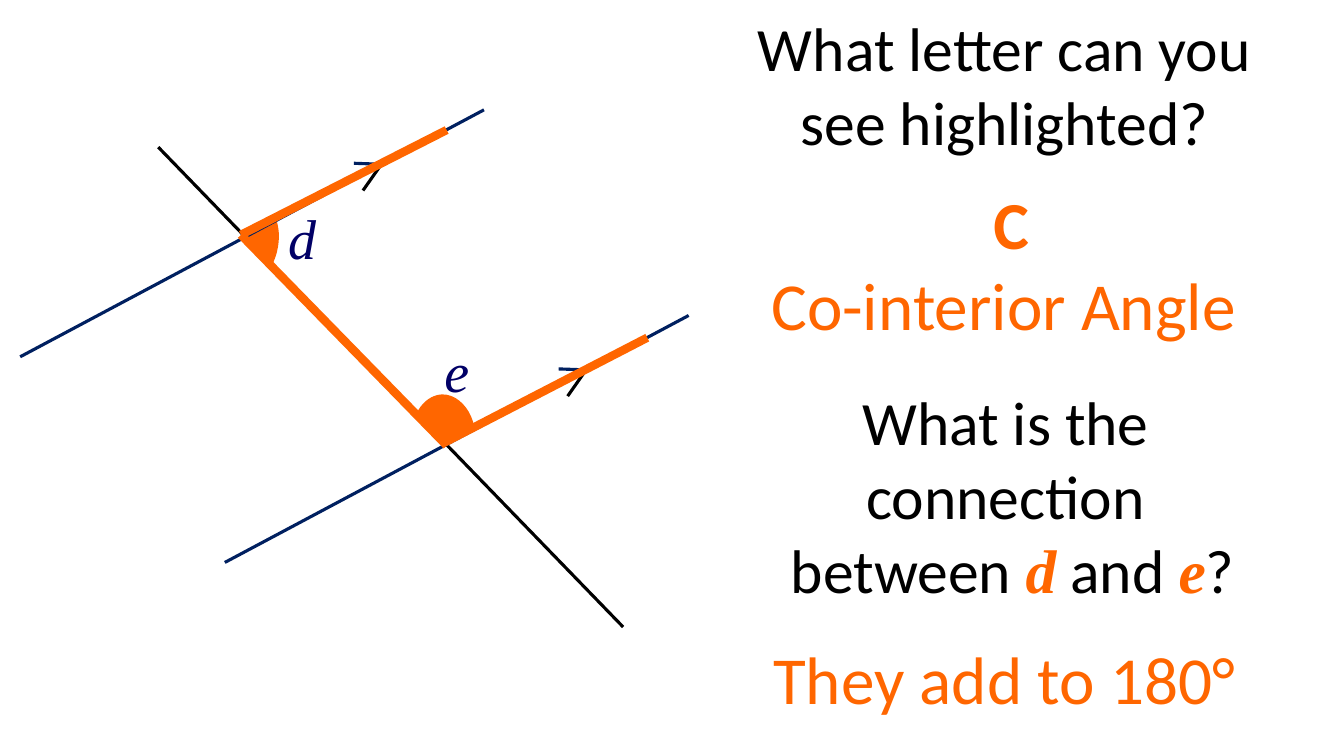
"""Build a slide on co-interior angles between parallel lines."""
import pptx
import pptx.dml.color
import pptx.enum.shapes
import pptx.enum.text
import pptx.oxml
import pptx.util
from pptx.util import Inches

BLACK, NAVY, INDIGO, ORANGE = "000000", "002060", "010066", "FF6600"
SERIF = "Times New Roman"
VARIABLE = {"font": SERIF, "color": ORANGE, "bold": True, "italic": True}

QUESTION = ("What letter can you see highlighted?", (7.29, 0.05, 5.35, 1.58))
PROMPTS = [
    ([["What is the connection"],
      [" between ", ("d", VARIABLE), " and ", ("e", VARIABLE), "?"]],
     (7.3, 3.76, 5.35, 2.32), {"size": 44}),
    ([[("C", {"bold": True})], ["Co-interior Angle "]],
     (7.45, 1.76, 5.16, 1.72), {"size": 48, "color": ORANGE}),
    ([["They add to 180°"]],
     (7.17, 6.27, 5.58, 0.91), {"size": 48, "color": ORANGE}),
]
ANGLE_LABELS = [("d", (2.76, 1.97, 0.41, 0.77)), ("e", (4.31, 3.29, 0.39, 0.77))]

# Each wedge: vertex, arc start, then cubic curves of two controls and an end.
WEDGES = [
    ((4.39, 4.39), (4.7, 4.24), [((4.66, 4.05), (4.53, 3.92), (4.39, 3.92)),
                                 ((4.3, 3.92), (4.2, 3.98), (4.14, 4.1))]),
    ((2.43, 2.34), (2.7, 2.61), [((2.74, 2.53), (2.76, 2.43), (2.76, 2.34)),
                                 ((2.76, 2.29), (2.75, 2.24), (2.74, 2.2))]),
]
TRANSVERSAL = ((1.57, 1.46), (6.18, 6.22))
PARALLEL = [((0.2, 3.54), (4.8, 1.09), NAVY),
            ((3.51, 1.62), (3.79, 1.63), NAVY),
            ((3.79, 1.62), (3.6, 1.89), BLACK)]
PARALLEL_SHIFTS = [(0, 0), (2.03, 2.04)]
HIGHLIGHTS = [((2.39, 2.33), (4.43, 1.29)),
              ((4.39, 4.4), (6.42, 3.35)),
              ((2.39, 2.33), (4.43, 4.42))]
CURVE_STEPS = 10


def rgb(value):
    return pptx.dml.color.RGBColor.from_string(value)


def write(holder, paragraphs, box, **style):
    holder.left, holder.top, holder.width, holder.height = map(Inches, box)
    frame = holder.text_frame
    frame.word_wrap = True
    frame.auto_size = pptx.enum.text.MSO_AUTO_SIZE.NONE
    frame.vertical_anchor = pptx.enum.text.MSO_ANCHOR.TOP
    for index, pieces in enumerate(paragraphs):
        paragraph = frame.add_paragraph() if index else frame.paragraphs[0]
        paragraph.alignment = style.get("align", pptx.enum.text.PP_ALIGN.CENTER)
        for piece in pieces:
            text, own = (piece, {}) if isinstance(piece, str) else piece
            look = {**style, **own}
            run = paragraph.add_run()
            run.text = text
            run.font.name = look.get("font", "Calibri")
            run.font.size = pptx.util.Pt(look["size"])
            run.font.bold = look.get("bold", False)
            run.font.italic = look.get("italic", False)
            run.font.color.rgb = rgb(look.get("color", BLACK))


def draw_line(slide, start, end, color, width=2.25):
    line = slide.shapes.add_connector(
        pptx.enum.shapes.MSO_CONNECTOR.STRAIGHT, *map(Inches, (*start, *end)))
    line.line.color.rgb = rgb(color)
    line.line.width = pptx.util.Pt(width)
    line._element.spPr.append(pptx.oxml.parse_xml(
        '<a:effectLst xmlns:a="http://schemas.openxmlformats.org/drawingml/2006/main"/>'))


def curve_points(start, first, second, end):
    for step in range(1, CURVE_STEPS + 1):
        t = step / CURVE_STEPS
        weights = ((1 - t) ** 3, 3 * t * (1 - t) ** 2, 3 * t * t * (1 - t), t ** 3)
        yield tuple(sum(w * p[axis] for w, p in zip(weights, (start, first, second, end)))
                    for axis in (0, 1))


def draw_wedge(slide, vertex, arc_start, curves):
    outline = [arc_start]
    for curve in curves:
        outline.extend(curve_points(outline[-1], *curve))
    builder = slide.shapes.build_freeform(*map(Inches, vertex))
    builder.add_line_segments([(Inches(x), Inches(y)) for x, y in outline], close=True)
    wedge = builder.convert_to_shape()
    wedge.shadow.inherit = False
    wedge.fill.solid()
    wedge.fill.fore_color.rgb = rgb(ORANGE)
    wedge.line.color.rgb = rgb(ORANGE)
    wedge.line.width = pptx.util.Pt(1)


def main():
    deck = pptx.Presentation()
    deck.slide_width, deck.slide_height = Inches(13.33), Inches(7.5)
    slide = deck.slides.add_slide(deck.slide_layouts.get_by_name("Title Only"))

    question, question_box = QUESTION
    write(slide.shapes.title, [[question]], question_box, size=44)

    for wedge in WEDGES:
        draw_wedge(slide, *wedge)
    draw_line(slide, *TRANSVERSAL, BLACK)
    for letter, box in ANGLE_LABELS:
        write(slide.shapes.add_textbox(0, 0, 0, 0), [[letter]], box, size=40, font=SERIF,
              color=INDIGO, italic=True, align=pptx.enum.text.PP_ALIGN.LEFT)
    for dx, dy in PARALLEL_SHIFTS:
        for (x1, y1), (x2, y2), color in PARALLEL:
            draw_line(slide, (x1 + dx, y1 + dy), (x2 + dx, y2 + dy), color)
    for start, end in HIGHLIGHTS:
        draw_line(slide, start, end, ORANGE, width=6)

    for paragraphs, box, style in PROMPTS:
        write(slide.shapes.add_textbox(0, 0, 0, 0), paragraphs, box, **style)

    deck.save("out.pptx")


if __name__ == "__main__":
    main()
